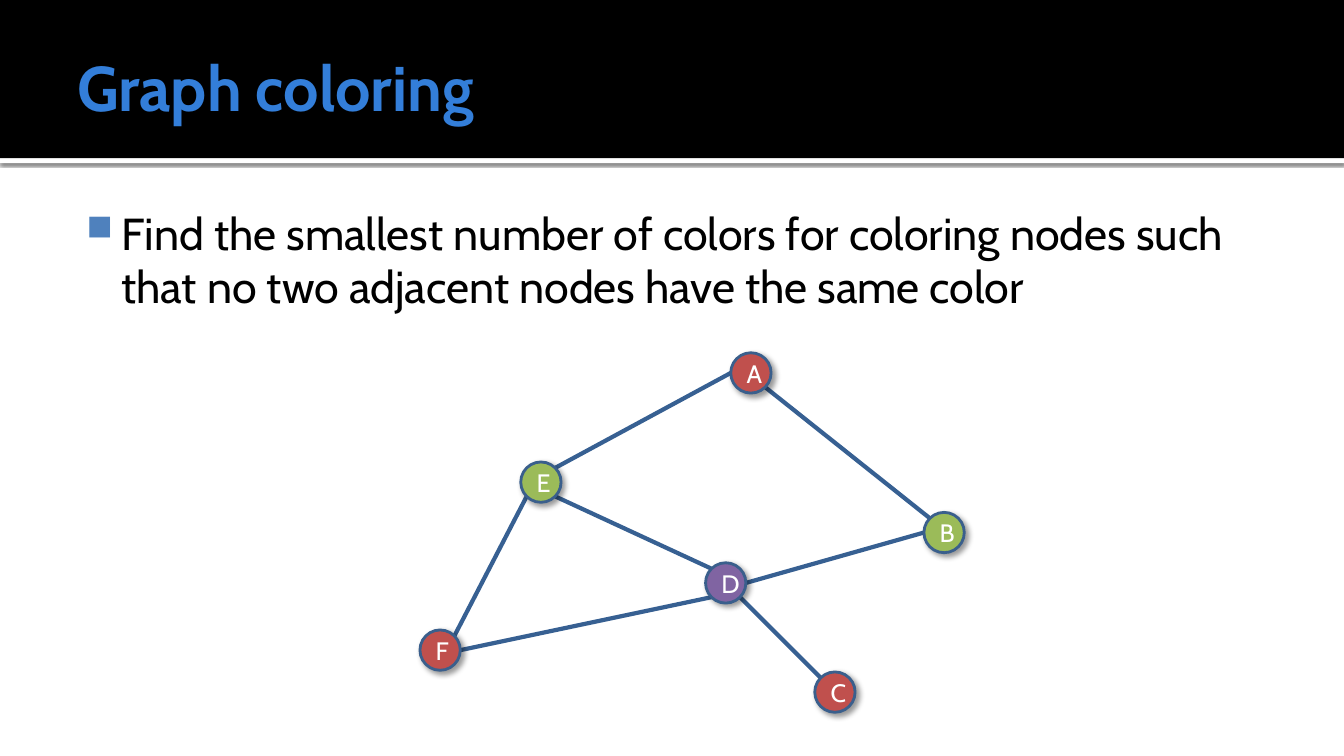
from dataclasses import dataclass
from math import cos, radians, sin

from lxml.etree import SubElement
from pptx import Presentation
from pptx.dml.color import RGBColor
from pptx.enum.shapes import MSO_CONNECTOR, MSO_SHAPE
from pptx.enum.text import MSO_ANCHOR, PP_ALIGN
from pptx.oxml.ns import qn
from pptx.util import Pt


@dataclass(frozen=True)
class Theme:
    """Colours, font and type sizes of the deck."""
    font: str = "Cabin"
    title_size: float = 45
    body_size: float = 32
    node_size: float = 18
    black: str = "000000"
    white: str = "FFFFFF"
    title: str = "337ED9"
    bullet: str = "4F81BD"
    edge: str = "376092"
    outline: str = "3A5F8C"
    red: str = "C0504D"
    green: str = "9BBB59"
    purple: str = "8064A2"


THEME = Theme()
NODE_DIAMETER = 28.8
NODES = {
    "E": (72, 78, THEME.green),
    "A": (222, 0, THEME.red),
    "D": (204, 150, THEME.purple),
    "B": (360, 114, THEME.green),
    "F": (0, 198, THEME.red),
    "C": (282, 228, THEME.red),
}
EDGES = [
    ("E", 315, "A", 180),
    ("E", 135, "F", 315),
    ("A", 45, "B", 225),
    ("B", 180, "D", 0),
    ("E", 45, "D", 225),
    ("F", 0, "D", 135),
    ("D", 45, "C", 225),
]


def colour(code):
    """Turn a hex code into a colour."""
    return RGBColor.from_string(code)


def add_shadow(shape, opacity, blur, distance, angle):
    """Give a shape a soft black outer shadow."""
    effects = shape._element.spPr.find(qn("a:effectLst"))
    shadow = SubElement(effects, qn("a:outerShdw"), blurRad=str(Pt(blur)),
                        dist=str(Pt(distance)), dir=str(angle * 60000),
                        algn="ctr", rotWithShape="0")
    black = SubElement(shadow, qn("a:srgbClr"), val=THEME.black)
    SubElement(black, qn("a:alpha"), val=str(opacity * 1000))


def add_solid(page, kind, box, fill):
    """Add a borderless filled shape without a shadow."""
    shape = page.shapes.add_shape(kind, *map(Pt, box))
    shape.shadow.inherit = False
    shape.fill.solid()
    shape.fill.fore_color.rgb = colour(fill)
    shape.line.fill.background()
    return shape


def style_text(para, size, code, bold=False):
    """Format every run of a paragraph."""
    for span in para.runs:
        span.font.name = THEME.font
        span.font.size = Pt(size)
        span.font.bold = bold
        span.font.color.rgb = colour(code)


def add_text(page, box, insets, text):
    """Add a wrapping text box with the given insets and return its frame."""
    frame = page.shapes.add_textbox(*map(Pt, box)).text_frame
    frame.word_wrap = True
    frame.margin_left, frame.margin_top, frame.margin_right, frame.margin_bottom = map(Pt, insets)
    frame.text = text
    return frame


def add_header(page, box, text):
    """Add the black title band with the white strip below it."""
    left, top, width, height = box
    strip = add_solid(page, MSO_SHAPE.RECTANGLE, (left, top + height, width, 3.6), THEME.white)
    add_shadow(strip, 60, 2.5, 0.8, 90)
    add_solid(page, MSO_SHAPE.RECTANGLE, box, THEME.black)
    frame = add_text(page, (left + 48, top + 12, width - 96, 99), (7.2, 3.6, 3.6, 3.6), text)
    frame.vertical_anchor = MSO_ANCHOR.MIDDLE
    style_text(frame.paragraphs[0], THEME.title_size, THEME.title, bold=True)


def add_body(page, box, text):
    """Add the bulleted statement of the problem."""
    para = add_text(page, box, (4.32, 7.2, 7.2, 3.6), text).paragraphs[0]
    properties = para._p.get_or_add_pPr()
    properties.set("marL", str(Pt(34.56)))
    properties.set("indent", str(Pt(-25.2)))
    bullet_colour = SubElement(properties, qn("a:buClr"))
    SubElement(bullet_colour, qn("a:srgbClr"), val=THEME.bullet)
    SubElement(properties, qn("a:buSzPct"), val="80000")
    SubElement(properties, qn("a:buChar"), char="■")
    style_text(para, THEME.body_size, THEME.black)


def rim_point(origin, name, angle):
    """Find the point on a node's rim at a clockwise angle from the right."""
    radius = NODE_DIAMETER / 2
    left, top, _ = NODES[name]
    return (Pt(origin[0] + left + radius * (1 + cos(radians(angle)))),
            Pt(origin[1] + top + radius * (1 + sin(radians(angle)))))


def add_graph(page, origin):
    """Draw the edges, then the coloured nodes, from the graph's top left corner."""
    for start, start_angle, end, end_angle in EDGES:
        edge = page.shapes.add_connector(
            MSO_CONNECTOR.STRAIGHT,
            *rim_point(origin, start, start_angle),
            *rim_point(origin, end, end_angle))
        edge.line.color.rgb = colour(THEME.edge)
        edge.line.width = Pt(3)
        SubElement(edge._element.spPr, qn("a:effectLst"))
    for name, (left, top, fill) in NODES.items():
        box = (origin[0] + left, origin[1] + top, NODE_DIAMETER, NODE_DIAMETER)
        node = add_solid(page, MSO_SHAPE.OVAL, box, fill)
        node.line.color.rgb = colour(THEME.outline)
        node.line.width = Pt(2)
        add_shadow(node, 40, 4, 3, 45)
        node.text_frame.text = name
        node.text_frame.vertical_anchor = MSO_ANCHOR.MIDDLE
        para = node.text_frame.paragraphs[0]
        para.alignment = PP_ALIGN.CENTER
        style_text(para, THEME.node_size, THEME.white)


def build_graph_slide(deck):
    """Add the graph coloring slide."""
    page = deck.slides.add_slide(deck.slide_layouts[6])
    add_header(page, (0, 0, 960, 113), "Graph coloring")
    add_body(page, (48, 139.5, 864, 364.5),
             "Find the smallest number of colors for coloring nodes such "
             "that no two adjacent nodes have the same color")
    add_graph(page, (300, 252))


def main():
    """Build and save the deck."""
    deck = Presentation()
    deck.slide_width, deck.slide_height = Pt(960), Pt(540)
    build_graph_slide(deck)
    deck.save("out.pptx")


if __name__ == "__main__":
    main()
